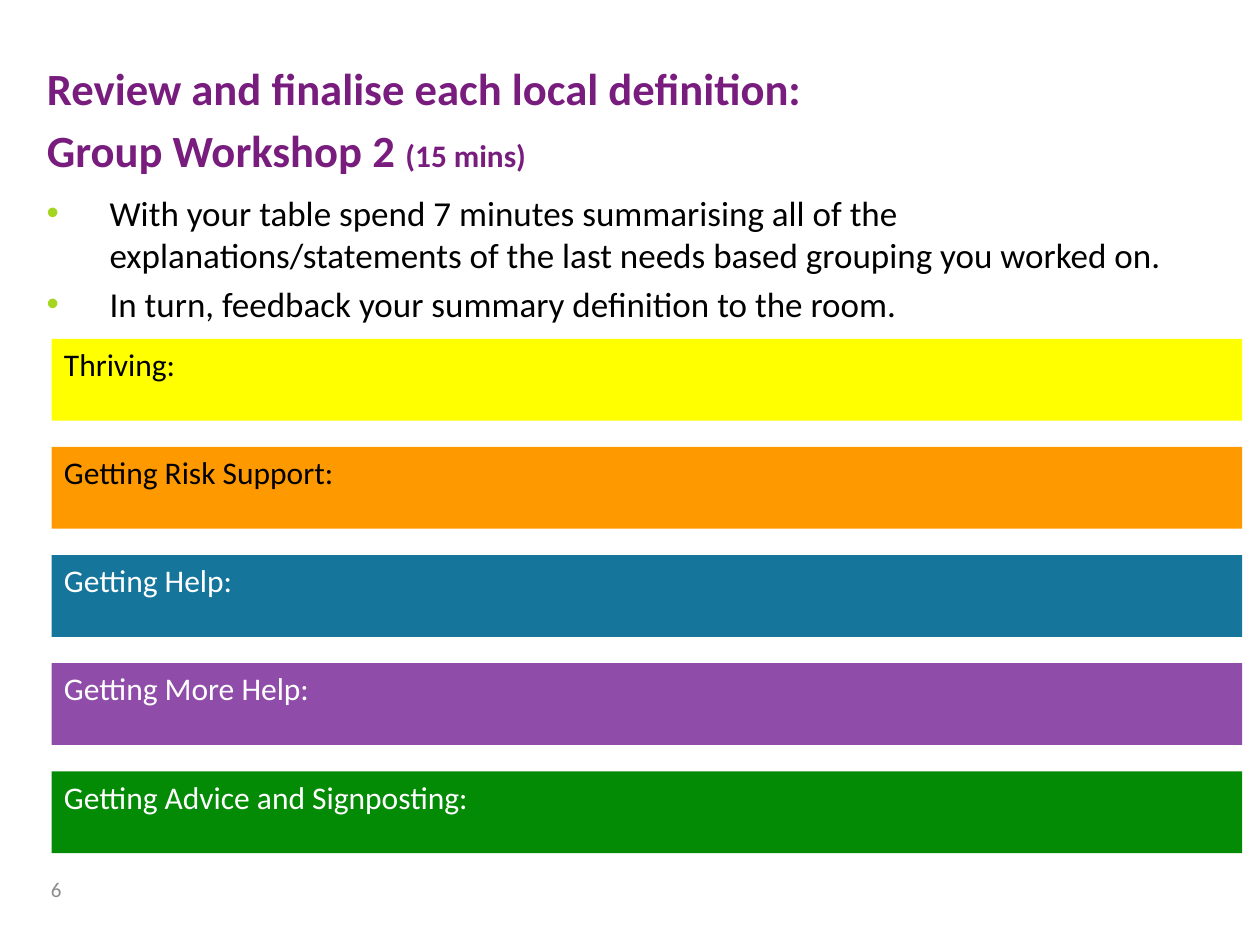
from lxml.etree import SubElement
from pptx import Presentation
from pptx.dml.color import RGBColor
from pptx.enum.shapes import MSO_SHAPE
from pptx.enum.text import MSO_ANCHOR, MSO_AUTO_SIZE, PP_ALIGN
from pptx.oxml.ns import qn
from pptx.util import Cm, Pt

COLOURS = {
    "heading": "781D7D",
    "bullet": "A4D620",
    "black": "000000",
    "white": "FFFFFF",
    "grey": "8C8C8C",
    "yellow": "FFFF00",
    "orange": "FF9900",
    "blue": "15759B",
    "purple": "8F4DA9",
    "green": "038B06",
}

# Heading lines, each a list of (text, size)
HEADING = [
    [("Review and finalise each local definition:", 25.5)],
    [("Group Workshop 2 ", 25.5), ("(15 mins)", 17.9)],
]
TASKS = [
    "With your table spend 7 minutes summarising all of the "
    "explanations/statements of the last needs based grouping you worked on.",
    "In turn, feedback your summary definition to the room.",
]
GROUPINGS = [
    ("Thriving:", "yellow", "black"),
    ("Getting Risk Support:", "orange", "black"),
    ("Getting Help:", "blue", "white"),
    ("Getting More Help:", "purple", "white"),
    ("Getting Advice and Signposting:", "green", "white"),
]
BAR_LEFT, BAR_TOP, BAR_WIDTH, BAR_HEIGHT, BAR_STEP = 1.04, 6.83, 24, 1.65, 2.18


class WorkshopSlide:
    """Holds the style and the current slide."""

    font = "Calibri"

    def __init__(self, deck):
        self.page = deck.slides.add_slide(deck.slide_layouts[5])

    def colour(self, name):
        return RGBColor.from_string(COLOURS[name])

    def style(self, paragraph, size, colour, bold=False):
        paragraph.font.name = self.font
        paragraph.font.size = Pt(size)
        paragraph.font.bold = bold
        paragraph.font.color.rgb = self.colour(colour)

    def paragraphs(self, frame, count, gap=0):
        """Yield the paragraphs of a frame, with a gap between them."""
        for index in range(count):
            paragraph = frame.add_paragraph() if index else frame.paragraphs[0]
            paragraph.space_before = Pt(gap if index else 0)
            yield paragraph

    def text_box(self, left, top, width, height):
        box = self.page.shapes.add_textbox(Cm(left), Cm(top), Cm(width), Cm(height))
        box.text_frame.word_wrap = True
        return box.text_frame

    def title(self, lines, left, top, width, height):
        title = self.page.shapes.title
        title.left, title.top = Cm(left), Cm(top)
        title.width, title.height = Cm(width), Cm(height)
        frame = title.text_frame
        frame.auto_size = MSO_AUTO_SIZE.NONE
        frame.vertical_anchor = MSO_ANCHOR.TOP
        for paragraph, spans in zip(self.paragraphs(frame, len(lines), 5.1), lines):
            paragraph.alignment = PP_ALIGN.LEFT
            self.style(paragraph, spans[0][1], "heading", bold=True)
            for text, size in spans:
                span = paragraph.add_run()
                span.text = text
                span.font.size = Pt(size)

    def bullets(self, items, left, top, width, height):
        frame = self.text_box(left, top, width, height)
        for paragraph, item in zip(self.paragraphs(frame, len(items), 4), items):
            paragraph.text = item
            properties = paragraph._p.get_or_add_pPr()
            properties.set("marL", str(Cm(1.27)))
            properties.set("indent", str(Cm(-1.27)))
            bullet_colour = SubElement(properties, qn("a:buClr"))
            SubElement(bullet_colour, qn("a:srgbClr"), val=COLOURS["bullet"])
            SubElement(properties, qn("a:buFont"), typeface="Arial")
            SubElement(properties, qn("a:buChar"), char="•")
            self.style(paragraph, 20, "black")

    def bar(self, text, fill, colour, left, top, width, height):
        bar = self.page.shapes.add_shape(
            MSO_SHAPE.RECTANGLE, Cm(left), Cm(top), Cm(width), Cm(height))
        bar.shadow.inherit = False
        bar.fill.solid()
        bar.fill.fore_color.rgb = self.colour(fill)
        bar.line.fill.background()
        frame = bar.text_frame
        frame.word_wrap = True
        frame.vertical_anchor = MSO_ANCHOR.TOP
        paragraph = frame.paragraphs[0]
        paragraph.text = text
        paragraph.alignment = PP_ALIGN.LEFT
        self.style(paragraph, 18, colour)

    def page_number(self, number, left, top, width, height):
        frame = self.text_box(left, top, width, height)
        frame.vertical_anchor = MSO_ANCHOR.MIDDLE
        paragraph = frame.paragraphs[0]
        paragraph.text = str(number)
        paragraph.alignment = PP_ALIGN.RIGHT
        self.style(paragraph, 12, "grey")


def main():
    deck = Presentation()
    deck.slide_width, deck.slide_height = Cm(25.4), Cm(19.05)
    slide = WorkshopSlide(deck)

    # Heading, tasks and page number
    slide.title(HEADING, 0.69, 1.09, 20.27, 2.34)
    slide.bullets(TASKS, 0.69, 3.73, 24, 12.6)
    slide.page_number(6, 0.3, 17.42, 1.19, 1.02)

    # One bar for each needs based grouping
    for index, (text, fill, colour) in enumerate(GROUPINGS):
        slide.bar(text, fill, colour, BAR_LEFT, BAR_TOP + index * BAR_STEP,
                  BAR_WIDTH, BAR_HEIGHT)

    deck.save("out.pptx")


if __name__ == "__main__":
    main()
